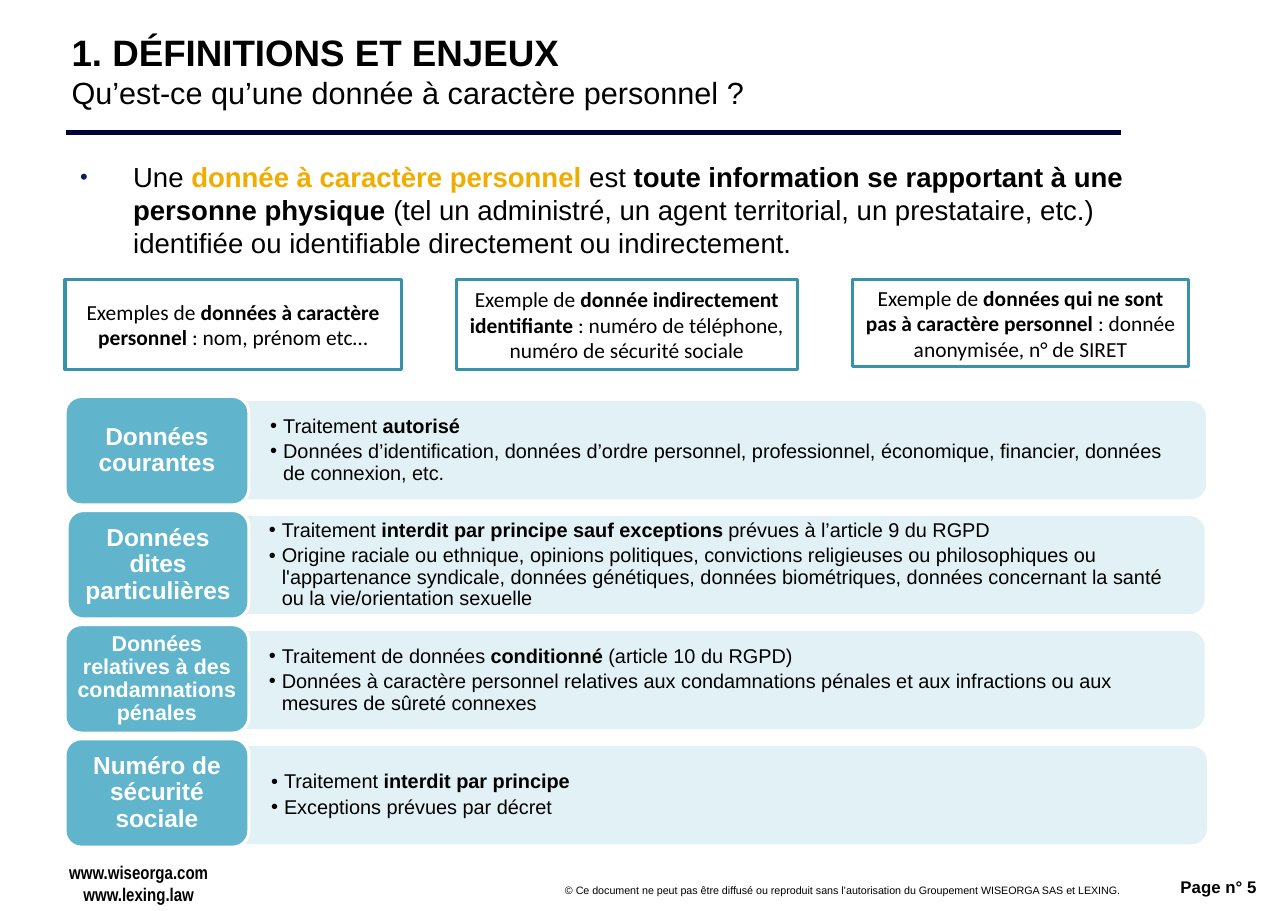
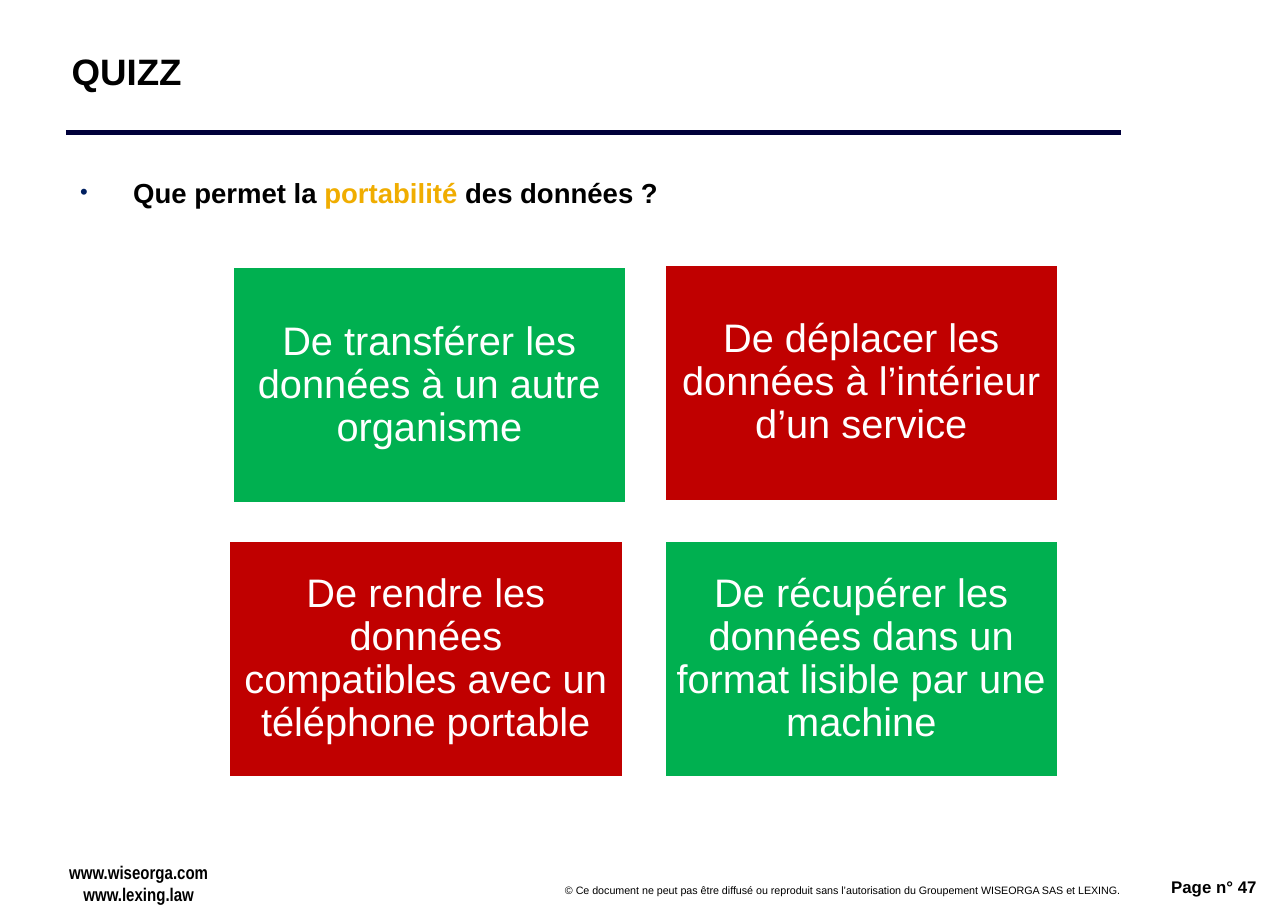
from copy import deepcopy
from math import cos, pi, sin

from lxml.etree import SubElement
from pptx import Presentation
from pptx.dml.color import RGBColor
from pptx.enum.shapes import MSO_CONNECTOR as CONN, MSO_SHAPE as SHAPE
from pptx.enum.text import MSO_ANCHOR as ANCHOR, MSO_AUTO_SIZE as AUTO, PP_ALIGN as ALIGN
from pptx.oxml.ns import qn
from pptx.util import Cm, Pt

BLACK, WHITE, NAVY, BULLET, GOLD = "000000", "FFFFFF", "00003A", "002060", "F0AD00"
TEAL, BLUE, PALE, GREEN, RED = "3792AA", "60B5CC", "DFF0F5", "00B050", "C00000"
BOLD = {"bold": True}
KEY = {"bold": True, "color": GOLD}
SITES = ["www.wiseorga.com", "www.lexing.law"]
NOTICE = ("© Ce document ne peut pas être diffusé ou reproduit sans l’autorisation "
          "du Groupement WISEORGA SAS et LEXING.")


def rgb(value):
    """Turn a hex string into a colour."""
    return RGBColor.from_string(value)


def set_all(target, values):
    """Set every attribute named in a dict."""
    for name, value in values.items():
        setattr(target, name, value)


class Deck:
    """Holds the style, the presentation and the current slide."""

    font = {"size": 18, "name": "Arial", "bold": False, "color": BLACK}

    def __init__(self):
        """Open an empty A4 landscape presentation."""
        self.prs = Presentation()
        set_all(self.prs, {"slide_width": Cm(29.7), "slide_height": Cm(21)})
        self.s = None

    def style_run(self, r, values):
        """Apply a dict of font values to a run."""
        values = {**self.font, **values}
        r.font.color.rgb = rgb(values.pop("color"))
        values["size"] = Pt(values["size"])
        set_all(r.font, values)

    def bullet(self, p, margin, hang, color=BLACK, percent=100):
        """Give a paragraph a hanging round bullet."""
        pPr = p._p.get_or_add_pPr()
        pPr.set("marL", str(Cm(margin)))
        pPr.set("indent", str(-Cm(hang)))
        SubElement(SubElement(pPr, qn("a:buClr")), qn("a:srgbClr")).set("val", color)
        SubElement(pPr, qn("a:buSzPct")).set("val", str(percent * 1000))
        SubElement(pPr, qn("a:buFont")).set("typeface", "Arial")
        SubElement(pPr, qn("a:buChar")).set("char", "•")

    def fill_text(self, tf, paras, font, para=None, insets=(0.25, 0.13, 0.25, 0.13),
                  anchor=ANCHOR.MIDDLE, wrap=True, bullet=None):
        """Fill a text frame; a run is a string or a (string, font values) pair."""
        left, top, right, bottom = map(Cm, insets)
        set_all(tf, {"auto_size": AUTO.NONE, "word_wrap": wrap, "vertical_anchor": anchor,
                     "margin_left": left, "margin_top": top,
                     "margin_right": right, "margin_bottom": bottom})
        for i, runs in enumerate(paras):
            p = tf.add_paragraph() if i else tf.paragraphs[0]
            if bullet:
                self.bullet(p, **bullet)
            set_all(p, {"alignment": ALIGN.LEFT, "space_before": Pt(0), **(para or {})})
            for run in [runs] if isinstance(runs, str) else runs:
                content, extra = (run, {}) if isinstance(run, str) else run
                r = p.add_run()
                r.text = content
                self.style_run(r, {**font, **extra})

    def place(self, sp, x, y, w, h):
        """Move and size a shape, in centimetres."""
        set_all(sp, {"left": Cm(x), "top": Cm(y), "width": Cm(w), "height": Cm(h)})
        return sp

    def paint(self, sp, fill, line=None):
        """Set fill and outline and drop the shadow."""
        sp.shadow.inherit = False
        sp.fill.solid()
        sp.fill.fore_color.rgb = rgb(fill)
        if line:
            sp.line.color.rgb = rgb(line)
            sp.line.width = Pt(2)
        else:
            sp.line.fill.background()

    def label(self, at, paras, font, align, **options):
        """Add a plain text box."""
        sp = self.s.shapes.add_textbox(*map(Cm, at))
        self.fill_text(sp.text_frame, paras, font, {"alignment": align},
                       anchor=ANCHOR.TOP, **options)

    def slide(self, page, heading, subtitle=None):
        """Start a slide with its title, rule and footer."""
        self.s = self.prs.slides.add_slide(self.prs.slide_layouts[1])
        self.title(heading, subtitle)
        rule = self.s.shapes.add_connector(CONN.STRAIGHT, Cm(1.52), Cm(3.05), Cm(25.86), Cm(3.05))
        rule.line.color.rgb = rgb(NAVY)
        rule.line.width = Pt(3)
        SubElement(rule._element.spPr, qn("a:effectLst"))
        narrow = {"size": 12, "name": "Arial Narrow", "bold": True}
        pads = (0.28, 0.15, 0.28, 0.15)
        self.label((1.23, 19.71, 3.94, 1.32), SITES, narrow, ALIGN.CENTER, insets=pads, wrap=False)
        self.label((9.7, 20.22, 16.41, 0.58), [NOTICE], {"size": 7}, ALIGN.RIGHT, insets=pads)
        self.label((26.16, 20.07, 3.07, 0.86), [f"Page n° {page}"],
                   {"size": 11, "bold": True}, ALIGN.RIGHT)

    def title(self, heading, subtitle):
        """Fill the title placeholder, with a lighter second line if given."""
        sp = self.place(self.s.shapes.title, 1.5, 0.43, 24.36, 2.39)
        self.fill_text(sp.text_frame, [heading], {"size": 24, "bold": True}, insets=(0.15,) * 4)
        if subtitle:
            p = sp.text_frame.paragraphs[0]
            p.add_line_break()
            p._p[-1].append(deepcopy(p.runs[0]._r.rPr))
            r = p.add_run()
            r.text = subtitle
            self.style_run(r, {"size": 20})

    def body(self, at, runs):
        """Fill the body placeholder with one bulleted paragraph."""
        sp = self.place(self.s.placeholders[1], *at)
        self.fill_text(sp.text_frame, [runs], {}, anchor=ANCHOR.TOP,
                       bullet={"margin": 1.32, "hang": 1.22, "color": BULLET, "percent": 80})

    def box(self, at, runs, fill, line, font, kind=SHAPE.RECTANGLE, spacing=1.0, **options):
        """Add a preset shape with centred text."""
        sp = self.s.shapes.add_shape(kind, *map(Cm, at))
        self.paint(sp, fill, line)
        if kind == SHAPE.ROUNDED_RECTANGLE:
            sp.adjustments[0] = 0.15
        self.fill_text(sp.text_frame, [runs], font,
                       {"alignment": ALIGN.CENTER, "line_spacing": spacing}, **options)

    def bar(self, x, y, w, h, paras, radius=0.35, steps=6):
        """Add a bulleted bar whose right corners are rounded."""
        right = x + w - radius
        angles = [pi / 2 * i / steps for i in range(steps + 1)]
        arc = [(right + radius * sin(a), radius * (1 - cos(a))) for a in angles]
        points = [(px, y + d) for px, d in arc] + [(px, y + h - d) for px, d in reversed(arc)]
        outline = self.s.shapes.build_freeform(Cm(x), Cm(y))
        outline.add_line_segments([(Cm(px), Cm(py)) for px, py in points + [(x, y + h)]])
        sp = outline.convert_to_shape()
        self.paint(sp, PALE)
        color = sp._element.spPr.find(qn("a:solidFill"))[0]
        SubElement(color, qn("a:alpha")).set("val", "90000")
        self.fill_text(sp.text_frame, paras, {"size": 13},
                       {"line_spacing": 0.9, "space_after": Pt(2.5)},
                       insets=(0.69, 0.43, 0.79, 0.43), bullet={"margin": 0.3, "hang": 0.3})


def definitions(deck):
    """Build the slide on personal data."""
    deck.slide(5, "1. DÉFINITIONS ET ENJEUX", "Qu’est-ce qu’une donnée à caractère personnel ?")
    deck.body((1.5, 3.56, 26.34, 1.98), [
        "Une ", ("donnée à caractère personnel ", KEY), "est ",
        ("toute information se rapportant à une personne physique ", BOLD),
        "(tel un administré, un agent territorial, un prestataire, etc.) identifiée ou "
        "identifiable directement ou indirectement."])
    examples = [
        (1.5, 7.75, 2.06, ["Exemples de ", ("données à caractère personnel", BOLD),
                           " : nom, prénom etc…"]),
        (10.52, 7.87, 2.06, ["Exemple de ", ("donnée indirectement identifiante", BOLD),
                             " : numéro de téléphone, numéro de sécurité sociale"]),
        (19.66, 7.75, 2.01, ["Exemple de ",
                             ("données qui ne sont pas à caractère personnel ", BOLD),
                             ": donnée anonymisée, n° de SIRET"])]
    for x, w, h, runs in examples:
        deck.box((x, 6.45, w, h), runs, WHITE, TEAL, {"size": 14, "name": "Calibri"})
    rows = [
        (1.5, 5.54, 16, "Données courantes", [
            ["Traitement ", ("autorisé", BOLD)],
            "Données d’identification, données d’ordre personnel, professionnel, économique, "
            "financier, données de connexion, etc."]),
        (1.55, 5.51, 16, "Données dites particulières", [
            ["Traitement ", ("interdit par principe sauf exceptions ", BOLD),
             "prévues à l’article 9 du RGPD"],
            "Origine raciale ou ethnique, opinions politiques, convictions religieuses ou "
            "philosophiques ou l'appartenance syndicale, données génétiques, données "
            "biométriques, données concernant la santé ou la vie/orientation sexuelle"]),
        (1.5, 5.51, 14, "Données relatives à des condamnations pénales", [
            ["Traitement de données ", ("conditionné", BOLD), " (article 10 du RGPD)"],
            "Données à caractère personnel relatives aux condamnations pénales et aux "
            "infractions ou aux mesures de sûreté connexes"]),
        (1.5, 5.56, 16, "Numéro de sécurité sociale", [
            ["Traitement ", ("interdit par principe", BOLD)],
            "Exceptions prévues par décret"])]
    for i, (x, bar_x, size, name, paras) in enumerate(rows):
        deck.bar(bar_x, 9.25 + 2.65 * i, 22.27, 2.26, paras)
        deck.box((x, 9.14 + 2.63 * i, 5.74 - x, 2.5), name, BLUE, WHITE,
                 {"size": size, "bold": True, "color": WHITE}, SHAPE.ROUNDED_RECTANGLE,
                 0.9, insets=(0.16, 0.09, 0.16, 0.09))


def quiz(deck):
    """Build the quiz slide."""
    deck.slide(47, "QUIZZ")
    deck.body((1.5, 3.92, 25.63, 1.88), [
        ("Que permet la ", BOLD), ("portabilité", KEY), (" des données ?", BOLD)])
    answers = [
        (5.36, 6.15, GREEN, "De transférer les données à un autre organisme"),
        (15.32, 6.1, RED, "De déplacer les données à l’intérieur d’un service"),
        (5.28, 12.47, RED, "De rendre les données compatibles avec un téléphone portable"),
        (15.32, 12.47, GREEN, "De récupérer les données dans un format lisible par une machine")]
    for x, y, color, answer in answers:
        deck.box((x, y, 9.09, 5.46), answer, color, WHITE, {"size": 26, "color": WHITE},
                 spacing=0.9, insets=(0.28,) * 4)


def main():
    """Build and save both slides."""
    deck = Deck()
    definitions(deck)
    quiz(deck)
    deck.prs.save("out.pptx")


if __name__ == "__main__":
    main()
